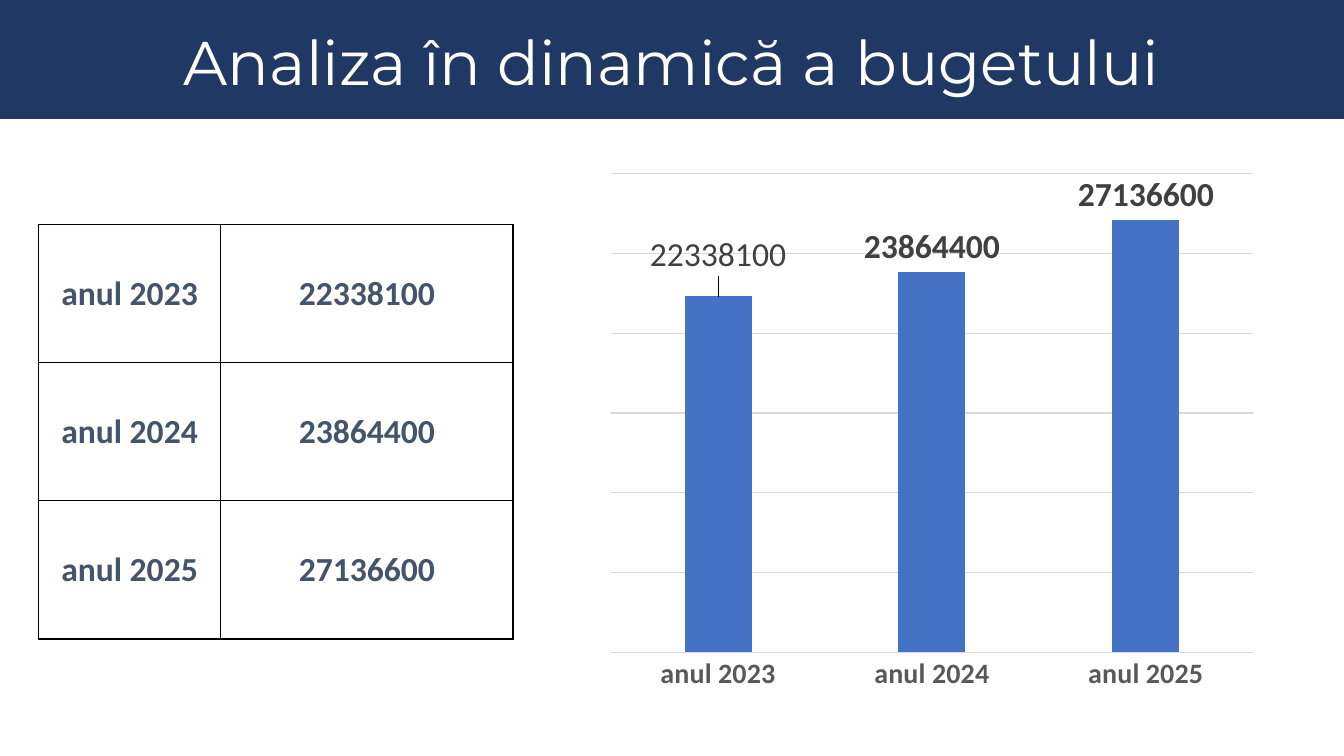
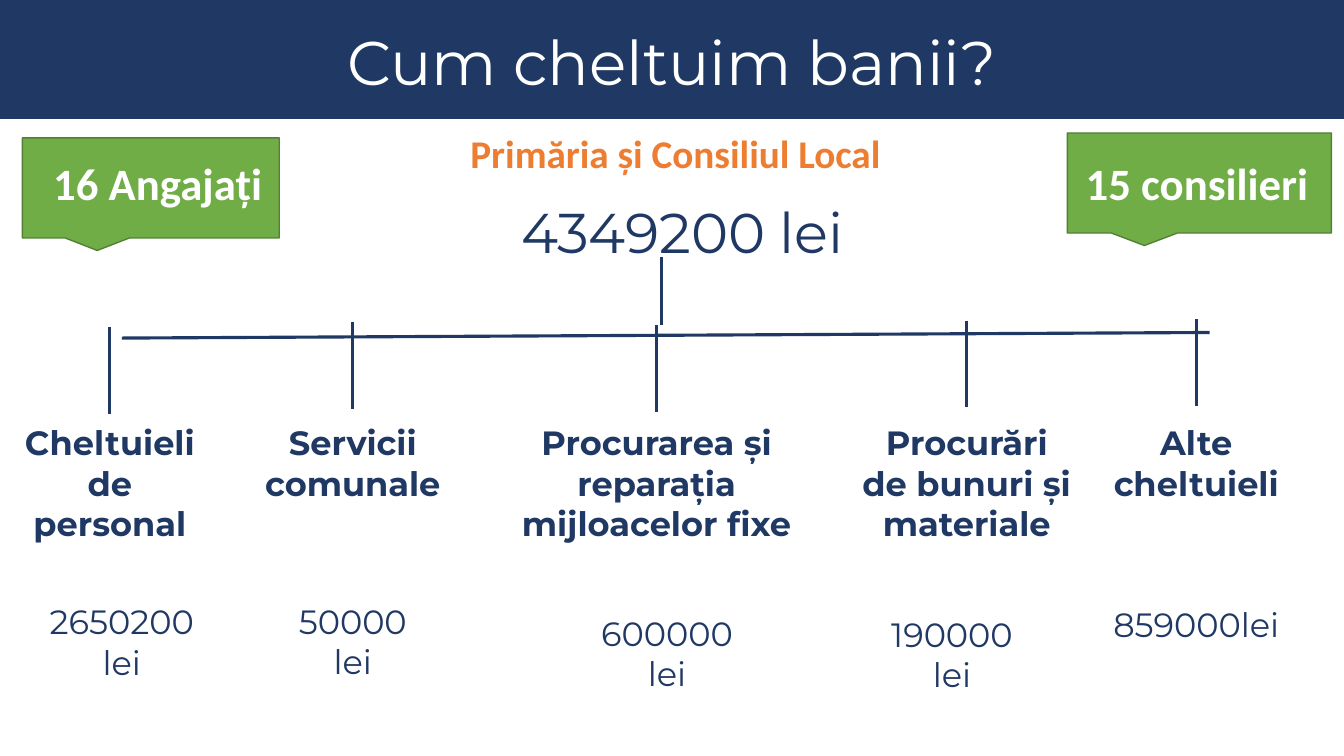
import pptx
import pptx.chart.data
import pptx.dml.color
import pptx.enum.chart
import pptx.enum.shapes
import pptx.enum.text
import pptx.oxml
import pptx.oxml.ns
import pptx.util

Pt = pptx.util.Pt
ALIGN = pptx.enum.text.PP_ALIGN
ANCHOR = pptx.enum.text.MSO_ANCHOR
SHAPE = pptx.enum.shapes.MSO_SHAPE

COLORS = {
    "navy": "203864",
    "white": "FFFFFF",
    "orange": "ED7D31",
    "green": "70AD47",
    "dark_green": "538035",
    "slate": "44546A",
    "blue": "4472C4",
    "black": "000000",
    "label": "404040",
    "axis": "595959",
    "grid": "D9D9D9",
}
HEADING_FONT = "Montserrat"
BODY_FONT = "Calibri"
SLIDE_WIDTH, SLIDE_HEIGHT = 960, 540

BUDGET = {"anul 2023": 22338100, "anul 2024": 23864400, "anul 2025": 27136600}

# Branch: x, tick top, name, name width, name lines, amount, amount centre, amount top
BRANCHES = [
    (78.5, 233.5, "Cheltuieli\nde\npersonal", 155.5, 3, "2650200\nlei", 87, 426),
    (252, 230, "Servicii\ncomunale", 148, 2, "50000\nlei", 252, 425.5),
    (469, 232, "Procurarea și\nreparația\nmijloacelor fixe", 230, 3,
     "600000\nlei", 476.5, 434),
    (690.5, 229, "Procurări de bunuri și materiale", 164, 3,
     "190000\nlei", 680, 435),
    (854.5, 228, "Alte cheltuieli", 164, 2, "859000lei", 854.5, 427.5),
]


def rgb(color):
    return pptx.dml.color.RGBColor.from_string(COLORS[color])


def format_font(font, size, color, name=BODY_FONT, bold=False):
    font.size = Pt(size)
    font.name = name
    font.bold = bold
    font.color.rgb = rgb(color)


def write_text(text_frame, text, size, color, name=BODY_FONT, bold=False,
               align=ALIGN.CENTER, line_spacing=None):
    """Write one paragraph for each line of the text."""
    text_frame.word_wrap = True
    for index, line in enumerate(text.split("\n")):
        paragraph = text_frame.add_paragraph() if index else text_frame.paragraphs[0]
        paragraph.alignment = align
        if line_spacing:
            paragraph.line_spacing = line_spacing
        run = paragraph.add_run()
        run.text = line
        format_font(run.font, size, color, name, bold)


def add_text_box(slide, left, top, width, height, text, **text_format):
    box = slide.shapes.add_textbox(Pt(left), Pt(top), Pt(width), Pt(height))
    write_text(box.text_frame, text, **text_format)
    box.text_frame.auto_size = pptx.enum.text.MSO_AUTO_SIZE.SHAPE_TO_FIT_TEXT


def add_filled_shape(slide, preset, left, top, width, height, fill, line=None):
    shape = slide.shapes.add_shape(preset, Pt(left), Pt(top), Pt(width), Pt(height))
    shape.shadow.inherit = False
    shape.fill.solid()
    shape.fill.fore_color.rgb = rgb(fill)
    if line:
        shape.line.color.rgb = rgb(line)
        shape.line.width = Pt(1)
    else:
        shape.line.fill.background()
    return shape


def add_callout(slide, left, top, width, text, margin_left, margin_bottom):
    callout = add_filled_shape(slide, SHAPE.RECTANGULAR_CALLOUT, left, top, width, 71.5,
                               "green", "dark_green")
    frame = callout.text_frame
    frame.margin_left, frame.margin_right = Pt(margin_left), Pt(0)
    frame.margin_bottom = Pt(margin_bottom)
    frame.vertical_anchor = ANCHOR.MIDDLE
    write_text(frame, text, size=32, color="white", bold=True, align=ALIGN.LEFT)


def add_line(slide, start_x, start_y, end_x, end_y):
    connector = slide.shapes.add_connector(
        pptx.enum.shapes.MSO_CONNECTOR.STRAIGHT,
        Pt(start_x), Pt(start_y), Pt(end_x), Pt(end_y))
    connector.line.color.rgb = rgb("navy")
    connector.line.width = Pt(2.25)
    connector.element.spPr.append(pptx.oxml.parse_xml(
        f"<a:effectLst {pptx.oxml.ns.nsdecls('a')}/>"))


def add_titled_slide(presentation, layout, title_text):
    """Add a slide with the title on its navy band."""
    slide = presentation.slides.add_slide(layout)
    title = slide.shapes.title
    write_text(title.text_frame, title_text, size=44, color="white",
               name=HEADING_FONT, line_spacing=0.9)
    band = add_filled_shape(slide, SHAPE.RECTANGLE, 0, 0, SLIDE_WIDTH, 85, "navy")
    title.element.addprevious(band.element)
    return slide


def add_budget_table(slide):
    widths, row_height = (130.3, 208.8), 98.6
    frame = slide.shapes.add_table(
        len(BUDGET), len(widths), Pt(27.4), Pt(160.6),
        Pt(sum(widths)), Pt(row_height * len(BUDGET)))
    table = frame.table
    table.first_row = table.horz_banding = False
    for column, width in zip(table.columns, widths):
        column.width = Pt(width)
    for row, values in zip(table.rows, BUDGET.items()):
        row.height = Pt(row_height)
        for cell, value in zip(row.cells, values):
            cell.fill.background()
            cell.vertical_anchor = ANCHOR.MIDDLE
            write_text(cell.text_frame, str(value), size=24, color="slate", bold=True)
    # Cell borders
    for properties in frame.element.iter(pptx.oxml.ns.qn("a:tcPr")):
        for index, side in enumerate("LRTB"):
            properties.insert(index, pptx.oxml.parse_xml(
                f'<a:ln{side} {pptx.oxml.ns.nsdecls("a")} w="{Pt(1)}"><a:solidFill>'
                f'<a:srgbClr val="{COLORS["black"]}"/></a:solidFill></a:ln{side}>'))


def add_budget_chart(slide):
    data = pptx.chart.data.CategoryChartData()
    data.categories = list(BUDGET)
    data.add_series("Series 1", list(BUDGET.values()))
    chart = slide.shapes.add_chart(
        pptx.enum.chart.XL_CHART_TYPE.COLUMN_CLUSTERED,
        Pt(427), Pt(116.6), Pt(477.4), Pt(384.5), data).chart
    chart.has_legend = chart.has_title = False
    format_font(chart.font, 10, "black")

    # Axes
    category_axis, value_axis = chart.category_axis, chart.value_axis
    category_axis.major_tick_mark = pptx.enum.chart.XL_TICK_MARK.NONE
    format_font(category_axis.tick_labels.font, 20, "axis", bold=True)
    value_axis.visible = False
    value_axis.minimum_scale, value_axis.maximum_scale = 0, 30000000
    value_axis.major_unit = 5000000
    for line in (category_axis.format.line, value_axis.major_gridlines.format.line):
        line.color.rgb = rgb("grid")
        line.width = Pt(0.75)

    # Columns and labels
    plot = chart.plots[0]
    plot.gap_width, plot.overlap = 219, -27
    plot.vary_by_categories = False
    series = plot.series[0]
    series.format.fill.solid()
    series.format.fill.fore_color.rgb = rgb("blue")
    outside = pptx.enum.chart.XL_LABEL_POSITION.OUTSIDE_END
    labels = series.data_labels
    labels.show_value = True
    labels.position = outside
    format_font(labels.font, 24, "label", bold=True)

    # The first label is regular and sits a little higher
    first_label = series.points[0].data_label
    format_font(first_label.font, 24, "label")
    first_label.position = outside
    label_element = next(chart.element.iter(pptx.oxml.ns.qn("c:dLbl")))
    label_element.insert(1, pptx.oxml.parse_xml(
        f'<c:layout {pptx.oxml.ns.nsdecls("c")}><c:manualLayout>'
        '<c:x val="0"/><c:y val="-0.03"/></c:manualLayout></c:layout>'))


def add_branch(slide, x, tick_top, name, name_width, name_lines,
               amount, amount_center, amount_top):
    line_height, padding, amount_width = 29.3, 7.2, 144
    text_format = {"size": 24, "color": "navy", "name": HEADING_FONT}
    add_line(slide, x, tick_top, x, tick_top + 62)
    add_text_box(slide, x - name_width / 2, 298, name_width,
                 name_lines * line_height + padding, name, bold=True, **text_format)
    amount_lines = len(amount.split("\n"))
    add_text_box(slide, amount_center - amount_width / 2, amount_top, amount_width,
                 amount_lines * line_height + padding, amount, **text_format)


def add_spending_tree(slide):
    add_text_box(slide, 16.5, 88.5, 932, 41, "Primăria și Consiliul Local",
                 size=28, color="orange", bold=True)
    add_text_box(slide, 235.5, 137.5, 504, 55.5, "4349200 lei",
                 size=40, color="navy", name=HEADING_FONT)
    add_callout(slide, 16, 98.5, 183.5, "16 Angajați", 22, 11)
    add_callout(slide, 762.5, 95, 188.5, "15 consilieri", 13, 3.6)
    # Stem, rail and branches
    add_line(slide, 472.5, 183.5, 472.5, 232)
    add_line(slide, 87, 241.5, 864, 237.5)
    for branch in BRANCHES:
        add_branch(slide, *branch)


def main():
    presentation = pptx.Presentation()
    presentation.slide_width = Pt(SLIDE_WIDTH)
    presentation.slide_height = Pt(SLIDE_HEIGHT)

    # Shared title position
    layout = presentation.slide_layouts.get_by_name("Title Only")
    title = layout.placeholders[0]
    title.left, title.top, title.width, title.height = Pt(12), Pt(18), Pt(936), Pt(58)

    # Budget over the years
    budget_slide = add_titled_slide(presentation, layout, "Analiza în dinamică a bugetului")
    add_budget_table(budget_slide)
    add_budget_chart(budget_slide)

    # Spending by purpose
    spending_slide = add_titled_slide(presentation, layout, "Cum cheltuim banii?")
    add_spending_tree(spending_slide)

    presentation.save("out.pptx")


if __name__ == "__main__":
    main()
